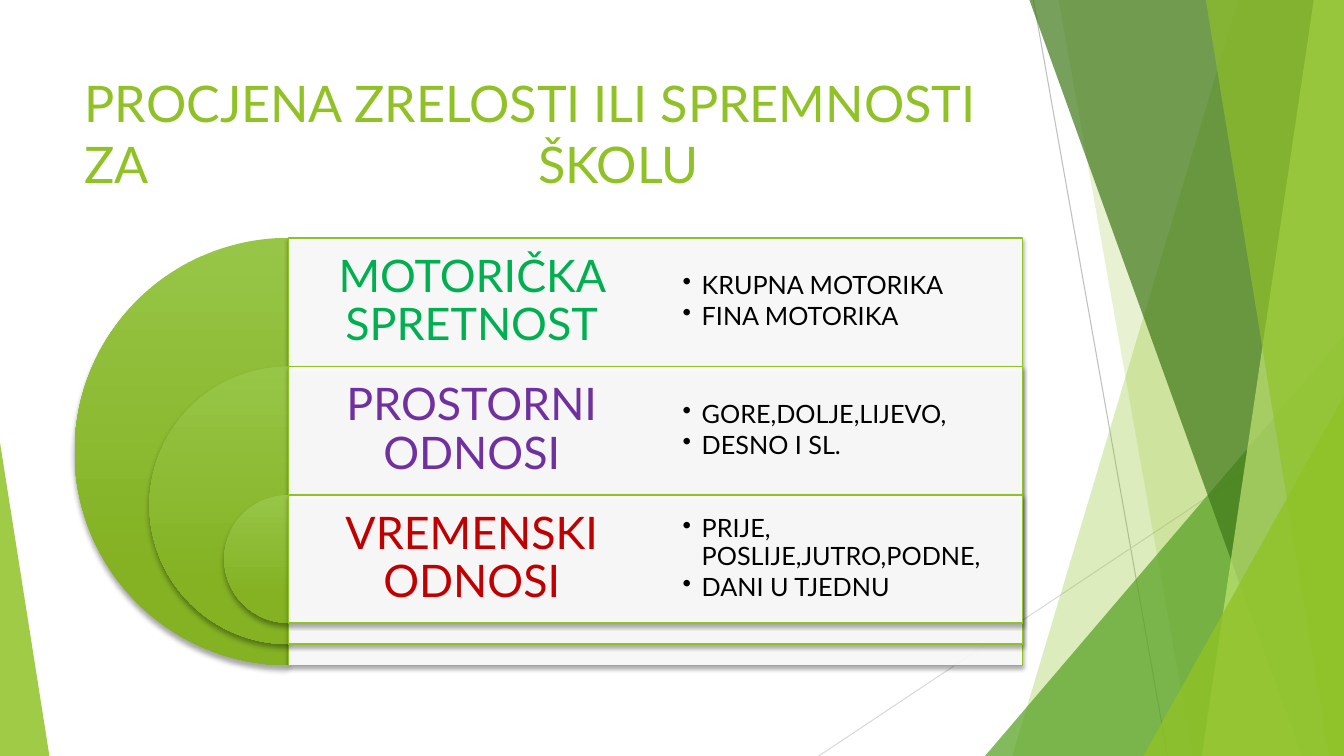
from lxml import etree
from pptx import Presentation
from pptx.dml.color import RGBColor
from pptx.enum.shapes import MSO_CONNECTOR, MSO_SHAPE
from pptx.enum.text import MSO_ANCHOR, PP_ALIGN
from pptx.oxml.ns import qn
from pptx.util import Inches, Pt

STRAIGHT = MSO_CONNECTOR.STRAIGHT
TRIANGLE, PIE, RECT = MSO_SHAPE.ISOSCELES_TRIANGLE, MSO_SHAPE.PIE, MSO_SHAPE.RECTANGLE
TOP, MIDDLE = MSO_ANCHOR.TOP, MSO_ANCHOR.MIDDLE
LEFT, CENTER = PP_ALIGN.LEFT, PP_ALIGN.CENTER

W, H = 13.33, 7.5
FONT = "Lato"
COLORS = {
    "lime": "90C226", "pale": "C0E474", "green": "54A021", "forest": "3F7819",
    "grad_top": "97C547", "grad_bottom": "84B223",
    "white": "FFFFFF", "black": "000000", "gray": "BFBFBF", "silver": "D9D9D9",
    "emerald": "00B050", "purple": "7030A0", "red": "C00000",
}

prs = Presentation()
prs.slide_width, prs.slide_height = Inches(W), Inches(H)
s = prs.slides.add_slide(prs.slide_layouts[6])


def paint(sp, color, alpha):
    sp.shadow.inherit = False
    sp.line.fill.background()
    sp.fill.solid()
    sp.fill.fore_color.rgb = RGBColor.from_string(COLORS[color])
    srgb = sp.fill._xPr.find(".//" + qn("a:srgbClr"))
    etree.SubElement(srgb, qn("a:alpha"), val=str(alpha * 1000))


def add_text(text, x, y, w, h, size, color, align=LEFT, anchor=MIDDLE,
             inset=0.13, spacing=0.9, after=0, bullet=False, tab=None):
    tf = s.shapes.add_textbox(Inches(x), Inches(y), Inches(w), Inches(h)).text_frame
    tf.word_wrap = True
    tf.vertical_anchor = anchor
    tf.margin_left = tf.margin_right = Inches(max(inset, 0.1))
    tf.margin_top = tf.margin_bottom = Inches(inset)
    for i, line in enumerate(text.split("\n")):
        p = tf.add_paragraph() if i else tf.paragraphs[0]
        p.alignment, p.line_spacing, p.space_after = align, spacing, Pt(after)
        r = p.add_run()
        r.text = line
        r.font.name, r.font.size = FONT, Pt(size)
        r.font.color.rgb = RGBColor.from_string(COLORS[color])
        pPr = p._p.get_or_add_pPr()
        if bullet:
            pPr.set("marL", str(Inches(0.19)))
            pPr.set("indent", str(-Inches(0.19)))
            etree.SubElement(pPr, qn("a:buChar"), char="•")
        if tab:
            tabs = etree.SubElement(pPr, qn("a:tabLst"))
            etree.SubElement(tabs, qn("a:tab"), pos=str(Inches(tab)), algn="l")


for x1, y1, x2, color in [(10.25, 0, 11.58, "gray"), (W, 4.03, 8.12, "silver")]:
    line = s.shapes.add_connector(STRAIGHT, Inches(x1), Inches(y1), Inches(x2), Inches(H))
    line.line.width = Pt(0.75)
    line.line.color.rgb = RGBColor.from_string(COLORS[color])
    etree.SubElement(line._element.spPr, qn("a:effectLst"))

FACETS = [
    ("band", 12.28, 10.04, "lime", 30),
    ("band", 10.5, 11.83, "lime", 20),
    ("corner", 9.77, 3.33, "green", 72),
    ("band", 10.21, 12.91, "forest", 70),
    ("band", 13.03, 11.92, "pale", 70),
    ("band", 11.96, 13.18, "lime", 65),
    ("corner", 11.34, 3.93, "lime", 80),
]
for kind, a, b, color, alpha in FACETS:
    if kind == "band":
        points = [(Inches(x), Inches(y)) for x, y in [(a, 0), (W, 0), (W, H), (b, H)]]
        builder = s.shapes.build_freeform(*points[0])
        builder.add_line_segments(points[1:])
        sp = builder.convert_to_shape()
    else:
        sp = s.shapes.add_shape(TRIANGLE, Inches(a), Inches(b), Inches(W - a), Inches(H - b))
        sp.adjustments[0] = 1
    paint(sp, color, alpha)

sp = s.shapes.add_shape(TRIANGLE, 0, Inches(4.39), Inches(0.49), Inches(H - 4.39))
sp.adjustments[0] = 0
paint(sp, "lime", 85)

add_text("PROCJENA ZRELOSTI ILI SPREMNOSTI ZA \tŠKOLU", 0.74, 0.67, 9.4, 1.44,
         36, "lime", anchor=TOP, inset=0.05, spacing=1, tab=4.5)

ROWS = [
    ("MOTORIČKA SPRETNOST", "emerald", "KRUPNA MOTORIKA\nFINA MOTORIKA"),
    ("PROSTORNI ODNOSI", "purple", "GORE,DOLJE,LIJEVO,\nDESNO I SL."),
    ("VREMENSKI ODNOSI", "red", "PRIJE, POSLIJE,JUTRO,PODNE,\nDANI U TJEDNU"),
]
X, Y, COL, ROW = 2.86, 2.36, 3.64, 1.27
DIAMETER, SHRINK, STEP = 4.24, 1.485, 1.275

for i, (heading, color, items) in enumerate(ROWS):
    y, d = Y + i * STEP, DIAMETER - i * SHRINK

    pie = s.shapes.add_shape(PIE, Inches(X - d / 2), Inches(y), Inches(d), Inches(d))
    pie.adjustments[0], pie.adjustments[1] = 54, 162
    pie.line.fill.background()
    pie.fill.gradient()
    pie.fill.gradient_angle = 270
    for stop, position, shade in zip(pie.fill.gradient_stops, (0, 0.78), ("grad_top", "grad_bottom")):
        stop.position = position
        stop.color.rgb = RGBColor.from_string(COLORS[shade])

    panel = s.shapes.add_shape(RECT, Inches(X), Inches(y), Inches(2 * COL), Inches(d))
    paint(panel, "white", 90)
    panel.line.width = Pt(1)
    panel.line.color.rgb = RGBColor.from_string(COLORS["lime"])

    for sp, blur, dist in [(pie, 4, 3), (panel, 3, 2)]:
        sp.shadow.inherit = False
        effects = sp._element.spPr.find(qn("a:effectLst"))
        shadow = etree.SubElement(effects, qn("a:outerShdw"), blurRad=str(Pt(blur)),
                                  dist=str(Pt(dist)), dir="5400000", rotWithShape="0")
        srgb = etree.SubElement(shadow, qn("a:srgbClr"), val=COLORS["black"])
        etree.SubElement(srgb, qn("a:alpha"), val="35000")

    add_text(heading, X, y, COL, ROW, 32, color, align=CENTER, after=11)
    add_text(items, X + COL, y, COL, ROW, 18, "black", inset=0.27, after=2.7, bullet=True)

prs.save("out.pptx")
